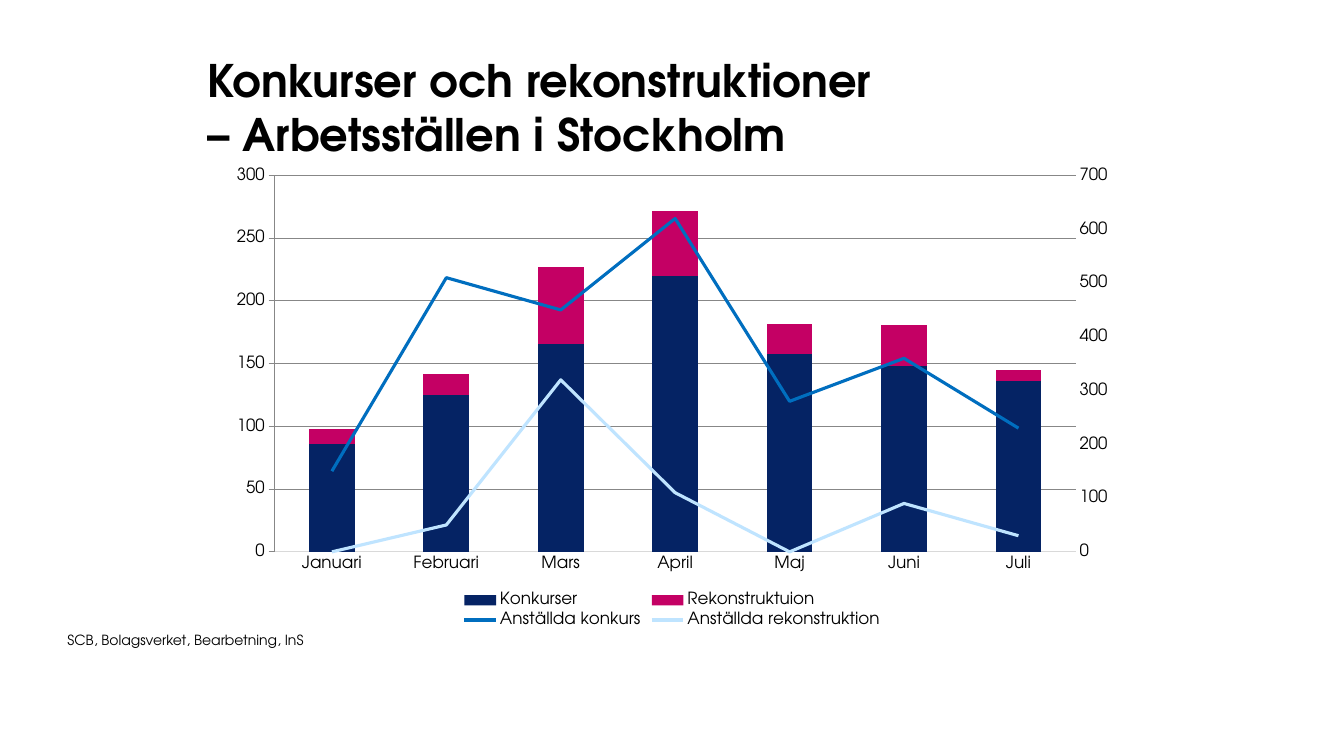
import pptx
import pptx.chart.axis
import pptx.chart.data
import pptx.dml.color
import pptx.enum.chart
import pptx.enum.text
import pptx.oxml
import pptx.util
from lxml import etree

Pt = pptx.util.Pt
FONT = "TeX Gyre Adventor"
MONTHS = ["Januari", "Februari", "Mars", "April", "Maj", "Juni", "Juli"]
COLUMNS = [
    ("Konkurser", [86, 125, 166, 220, 158, 148, 136], "052364"),
    ("Rekonstruktuion", [12, 17, 61, 52, 24, 33, 9], "C40064"),
]
LINES = [
    ("Anställda konkurs", [150, 510, 450, 620, 280, 360, 230], "006EBF"),
    ("Anställda rekonstruktion", [0, 50, 320, 110, 0, 90, 30], "BFE4FF"),
]
CHART_NS = "http://schemas.openxmlformats.org/drawingml/2006/chart"
LINE_PLOT = f"""<c:lineChart xmlns:c="{CHART_NS}">
<c:grouping val="standard"/><c:varyColors val="0"/><c:marker val="1"/>
<c:axId val="5001"/><c:axId val="5002"/></c:lineChart>"""
RIGHT_AXIS = f"""<c:valAx xmlns:c="{CHART_NS}"><c:axId val="5002"/>
<c:scaling><c:orientation val="minMax"/></c:scaling><c:delete val="0"/>
<c:axPos val="r"/><c:numFmt formatCode="General" sourceLinked="0"/>
<c:majorTickMark val="out"/><c:minorTickMark val="none"/>
<c:tickLblPos val="nextTo"/><c:crossAx val="5001"/><c:crosses val="max"/>
</c:valAx>"""
HIDDEN_AXIS = f"""<c:catAx xmlns:c="{CHART_NS}"><c:axId val="5001"/>
<c:scaling><c:orientation val="minMax"/></c:scaling><c:delete val="1"/>
<c:axPos val="b"/><c:majorTickMark val="none"/><c:minorTickMark val="none"/>
<c:tickLblPos val="nextTo"/><c:crossAx val="5002"/><c:crosses val="autoZero"/>
</c:catAx>"""


def color(value):
    return pptx.dml.color.RGBColor.from_string(value)


def style_font(font, size, bold=False):
    font.name = FONT
    font.size = Pt(size)
    font.bold = bold
    font.color.rgb = color("000000")


def style_line(line, value, width):
    line.color.rgb = color(value)
    line.width = Pt(width)


def fill_placeholder(shape, box, text, size, anchor, bold=False):
    shape.left, shape.top, shape.width, shape.height = map(Pt, box)
    frame = shape.text_frame
    frame.text = text
    frame.word_wrap = True
    frame.auto_size = pptx.enum.text.MSO_AUTO_SIZE.NONE
    frame.vertical_anchor = anchor
    frame.margin_left = frame.margin_right = 0
    frame.margin_top = frame.margin_bottom = 0
    para = frame.paragraphs[0]
    para.alignment = pptx.enum.text.PP_ALIGN.LEFT
    para.space_before = Pt(0)
    for span in para.runs:
        style_font(span.font, size, bold)
    return para


def add_title(page, box):
    fill_placeholder(
        page.shapes.title, box,
        "Konkurser och rekonstruktioner\v– Arbetsställen i Stockholm",
        32, pptx.enum.text.MSO_ANCHOR.BOTTOM, True)


def add_source_line(page, box):
    para = fill_placeholder(
        page.placeholders[1], box, "SCB, Bolagsverket, Bearbetning, InS",
        10, pptx.enum.text.MSO_ANCHOR.TOP)
    properties = para._p.get_or_add_pPr()
    properties.set("marL", "0")
    properties.set("indent", "0")
    etree.SubElement(properties, f"{{{properties.nsmap['a']}}}buNone")


def move_lines_to_right_axis(chart):
    column_plot = chart._chartSpace.find(f".//{{{CHART_NS}}}barChart")
    line_plot = pptx.oxml.parse_xml(LINE_PLOT)
    marker = line_plot.find(f"{{{CHART_NS}}}marker")
    for series in column_plot.findall(f"{{{CHART_NS}}}ser")[len(COLUMNS):]:
        for flag in series.findall(f"{{{CHART_NS}}}invertIfNegative"):
            series.remove(flag)
        marker.addprevious(series)
    column_plot.addnext(line_plot)
    left_axis = chart._chartSpace.find(f".//{{{CHART_NS}}}valAx")
    right_axis = pptx.oxml.parse_xml(RIGHT_AXIS)
    left_axis.addnext(right_axis)
    right_axis.addnext(pptx.oxml.parse_xml(HIDDEN_AXIS))
    return pptx.chart.axis.ValueAxis(right_axis)


def add_combined_chart(page, box):
    data = pptx.chart.data.CategoryChartData()
    data.categories = MONTHS
    for name, values, _ in COLUMNS + LINES:
        data.add_series(name, values)
    kinds = pptx.enum.chart
    chart = page.shapes.add_chart(
        kinds.XL_CHART_TYPE.COLUMN_STACKED, *map(Pt, box), data).chart
    style_font(chart.font, 12)
    chart.has_title = False
    chart.has_legend = True
    chart.legend.position = kinds.XL_LEGEND_POSITION.BOTTOM
    chart.legend.include_in_layout = False
    style_font(chart.legend.font, 12)

    right_axis = move_lines_to_right_axis(chart)
    column_plot, line_plot = chart.plots
    column_plot.gap_width = 150
    column_plot.overlap = 100
    column_plot.vary_by_categories = False
    for series, (_, _, value) in zip(column_plot.series, COLUMNS):
        series.format.fill.solid()
        series.format.fill.fore_color.rgb = color(value)
    for series, (_, _, value) in zip(line_plot.series, LINES):
        style_line(series.format.line, value, 2.25)
        series.marker.style = kinds.XL_MARKER_STYLE.NONE
        series.smooth = False

    for axis in (chart.category_axis, chart.value_axis, right_axis):
        style_font(axis.tick_labels.font, 12)
    for axis in (chart.category_axis, chart.value_axis):
        axis.major_tick_mark = kinds.XL_TICK_MARK.NONE
    for axis, top, step in ((chart.value_axis, 300, 50), (right_axis, 700, 100)):
        axis.minimum_scale = 0
        axis.maximum_scale = top
        axis.major_unit = step
        axis.format.line.fill.background()
    style_line(chart.category_axis.format.line, "D9D9D9", 0.75)
    style_line(chart.value_axis.major_gridlines.format.line, "D9D9D9", 0.75)


def main():
    deck = pptx.Presentation()
    deck.slide_width = Pt(960)
    deck.slide_height = Pt(540)
    page = deck.slides.add_slide(deck.slide_layouts[1])
    add_title(page, (148.3, 26.6, 663.8, 87.8))
    add_source_line(page, (48.2, 451.4, 764.6, 14.4))
    add_combined_chart(page, (156.2, 113, 648, 338.4))
    deck.save("out.pptx")


if __name__ == "__main__":
    main()
